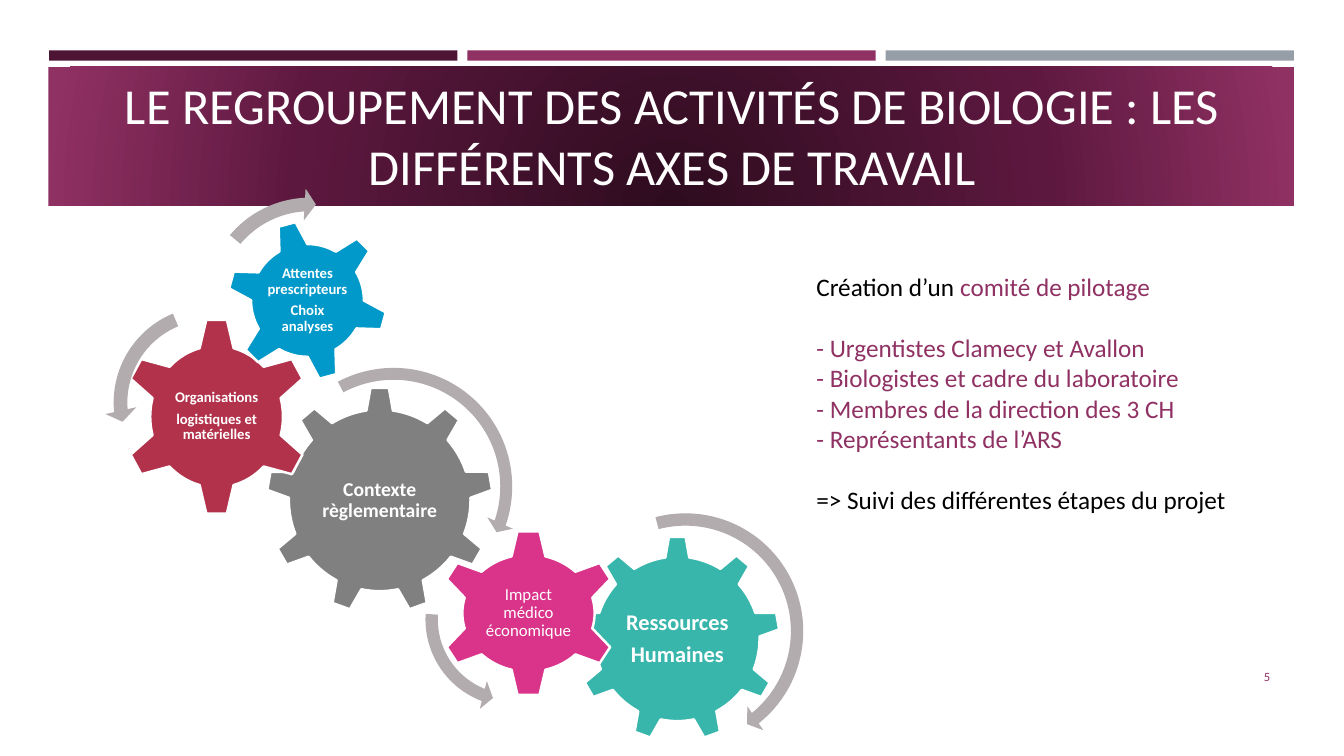
"""Build the slide on the work streams for grouping biology activities."""
import pptx
import pptx.util
import pptx.dml.color
import pptx.enum.shapes
import pptx.enum.text
import pptx.oxml
from pptx.util import Cm

SHAPE = pptx.enum.shapes.MSO_SHAPE
ALIGN = pptx.enum.text.PP_ALIGN
MIDDLE = pptx.enum.text.MSO_ANCHOR.MIDDLE
FONT = "Calibri"
PLUM, WHITE, BLACK, ARROW_GREY = "903163", "FFFFFF", "000000", "B2ACAE"

TITLE = "LE REGROUPEMENT DES ACTIVITÉS DE BIOLOGIE : LES DIFFÉRENTS AXES DE TRAVAIL"
PAGE_NUMBER = "5"
BAR_COLOURS = ["4D1434", PLUM, "969FA7"]
BAND_STOPS = [(0, "2E0C1F"), (60, "5D183F"), (100, PLUM)]

# kind, left, top, width, height, rotation, colour, label size, bold, points, lines
GEARS = [
    (SHAPE.GEAR_9, (6.71, 9.75, 5.72, 5.72), 0, "808080",
     (3.43, 2.95), 14, True, ["Contexte règlementaire"]),
    (SHAPE.GEAR_6, (3.07, 8, 4.78, 5), 0, "B2324B",
     (2.36, 2.51), 10.5, True, ["Organisations", "logistiques et matérielles"]),
    (SHAPE.GEAR_6, (5.72, 5.54, 4.06, 4.06), 345, "0099C9",
     (2.29, 2.29), 10.5, True, ["Attentes prescripteurs", "Choix analyses"]),
    (SHAPE.GEAR_9, (14.48, 13.51, 5.18, 5.18), 0, "38B6AB",
     (3.1, 2.67), 16, True, ["Ressources", "Humaines"]),
    (SHAPE.GEAR_6, (11.02, 13.34, 4.6, 4.22), 0, "D9338A",
     (2.36, 2.08), 12, False, ["Impact médico économique"]),
]
LEFT_TURN = (0.065, 4.3, 104.89, 148.38, 0.075)
ARROWS = [
    (SHAPE.CIRCULAR_ARROW, (6.73, 9.07, 6.38), 337.2, (0.047, 2.99, 25.05, 158.87, 0.055)),
    (SHAPE.LEFT_CIRCULAR_ARROW, (2.64, 7.49, 5.31), 0, LEFT_TURN),
    (SHAPE.CIRCULAR_ARROW, (4.95, 4.75, 5.74), 44.8, (0.06, 3.94, 133.14, 105.08, 0.07)),
    (SHAPE.CIRCULAR_ARROW, (14.1, 12.73, 6.35), 0, (0.049, 3.13, 30.75, 153.17, 0.057)),
    (SHAPE.LEFT_CIRCULAR_ARROW, (10.52, 13.21, 4.8), 296.4, LEFT_TURN),
]
COMMITTEE = [
    (0, [("Création d’un ", BLACK), ("comité de pilotage", PLUM)]),
    (22, [("- Urgentistes Clamecy et Avallon", PLUM)]),
    (0, [("- Biologistes et cadre du laboratoire", PLUM)]),
    (0, [("- Membres de la direction des 3 CH", PLUM)]),
    (0, [("- Représentants de l’ARS", PLUM)]),
    (22, [("=> Suivi des différentes étapes du projet", BLACK)]),
]


def colour(value):
    return pptx.dml.color.RGBColor.from_string(value)


def style(font, size, value, bold=False):
    font.name, font.size, font.bold = FONT, pptx.util.Pt(size), bold
    font.color.rgb = colour(value)


def place(shape, left, top, width, height):
    shape.left, shape.top = Cm(left), Cm(top)
    shape.width, shape.height = Cm(width), Cm(height)


def add_filled(page, kind, box, fill, outline=None, rotation=0):
    shape = page.shapes.add_shape(kind, *map(Cm, box))
    shape.shadow.inherit = False
    shape.rotation = rotation
    shape.fill.solid()
    shape.fill.fore_color.rgb = colour(fill)
    if outline:
        shape.line.color.rgb = colour(outline)
        shape.line.width = pptx.util.Pt(1.75)
    else:
        shape.line.fill.background()
    return shape


def add_label(page, box, lines, size, value, bold, align):
    label = page.shapes.add_textbox(*map(Cm, box))
    frame = label.text_frame
    frame.word_wrap = True
    frame.vertical_anchor = MIDDLE
    frame.text = "\n".join(lines)
    for para in frame.paragraphs:
        para.alignment = align
        style(para.runs[0].font, size, value, bold)
    return frame


def add_header(page):
    for index, value in enumerate(BAR_COLOURS):
        add_filled(page, SHAPE.RECTANGLE, (1.24 + index * 10.54, 1.27, 10.29, 0.26), value)
    band = add_filled(page, SHAPE.RECTANGLE, (1.22, 1.68, 31.39, 3.51), PLUM)
    stops = "".join(f'<a:gs pos="{pos * 1000}"><a:srgbClr val="{value}"/></a:gs>'
                    for pos, value in BAND_STOPS)
    gradient = pptx.oxml.parse_xml(
        '<a:gradFill xmlns:a="http://schemas.openxmlformats.org/drawingml/2006/main" '
        f'rotWithShape="1"><a:gsLst>{stops}</a:gsLst><a:path path="circle">'
        '<a:fillToRect l="50000" t="130000" r="50000" b="-30000"/></a:path></a:gradFill>')
    properties = band._element.spPr
    properties.replace(properties.find(pptx.oxml.ns.qn("a:solidFill")), gradient)
    title = page.shapes.title
    place(title, 1.63, 2.03, 30.63, 2.74)
    title.text_frame.text = TITLE
    title.text_frame.vertical_anchor = MIDDLE
    title.text_frame.auto_size = pptx.enum.text.MSO_AUTO_SIZE.NONE
    para = title.text_frame.paragraphs[0]
    para.alignment = ALIGN.CENTER
    style(para.runs[0].font, 36, WHITE)
    page.shapes._spTree.append(title._element)


def add_gears(page):
    for kind, box, rotation, fill, label_size, size, bold, lines in GEARS:
        add_filled(page, kind, box, fill, WHITE, rotation)
        left, top, width, height = box
        across, down = label_size
        label_box = (left + (width - across) / 2, top + (height - down) / 2, across, down)
        frame = add_label(page, label_box, lines, size, WHITE, bold, ALIGN.CENTER)
        frame.margin_left = frame.margin_right = Cm(0.05)
        frame.margin_top = frame.margin_bottom = Cm(0.05)
        for para in frame.paragraphs:
            para.line_spacing = 0.9
            para.space_after = pptx.util.Pt(round(size * 0.35, 1))


def add_arrows(page):
    for kind, (left, top, side), rotation, adjustments in ARROWS:
        arrow = add_filled(page, kind, (left, top, side, side), ARROW_GREY, rotation=rotation)
        for index, value in enumerate(adjustments):
            arrow.adjustments[index] = value


def add_committee(page):
    body = page.placeholders[1]
    place(body, 20.32, 6.71, 11.9, 6.4)
    frame = body.text_frame
    frame.auto_size = pptx.enum.text.MSO_AUTO_SIZE.NONE
    for index, (gap, spans) in enumerate(COMMITTEE):
        para = frame.add_paragraph() if index else frame.paragraphs[0]
        properties = para._p.get_or_add_pPr()
        properties.set("marL", "0")
        properties.set("indent", "0")
        properties.append(properties.makeelement(pptx.oxml.ns.qn("a:buNone"), {}))
        para.space_before = pptx.util.Pt(gap)
        for text, value in spans:
            span = para.add_run()
            span.text = text
            style(span.font, 18, value)


def main():
    deck = pptx.Presentation()
    deck.slide_width, deck.slide_height = Cm(33.87), Cm(19.05)
    page = deck.slides.add_slide(deck.slide_layouts[1])
    add_header(page)
    add_gears(page)
    add_arrows(page)
    add_committee(page)
    add_label(page, (29.34, 16.54, 2.92, 1.02), [PAGE_NUMBER], 9, PLUM, False, ALIGN.RIGHT)
    deck.save("out.pptx")


if __name__ == "__main__":
    main()
